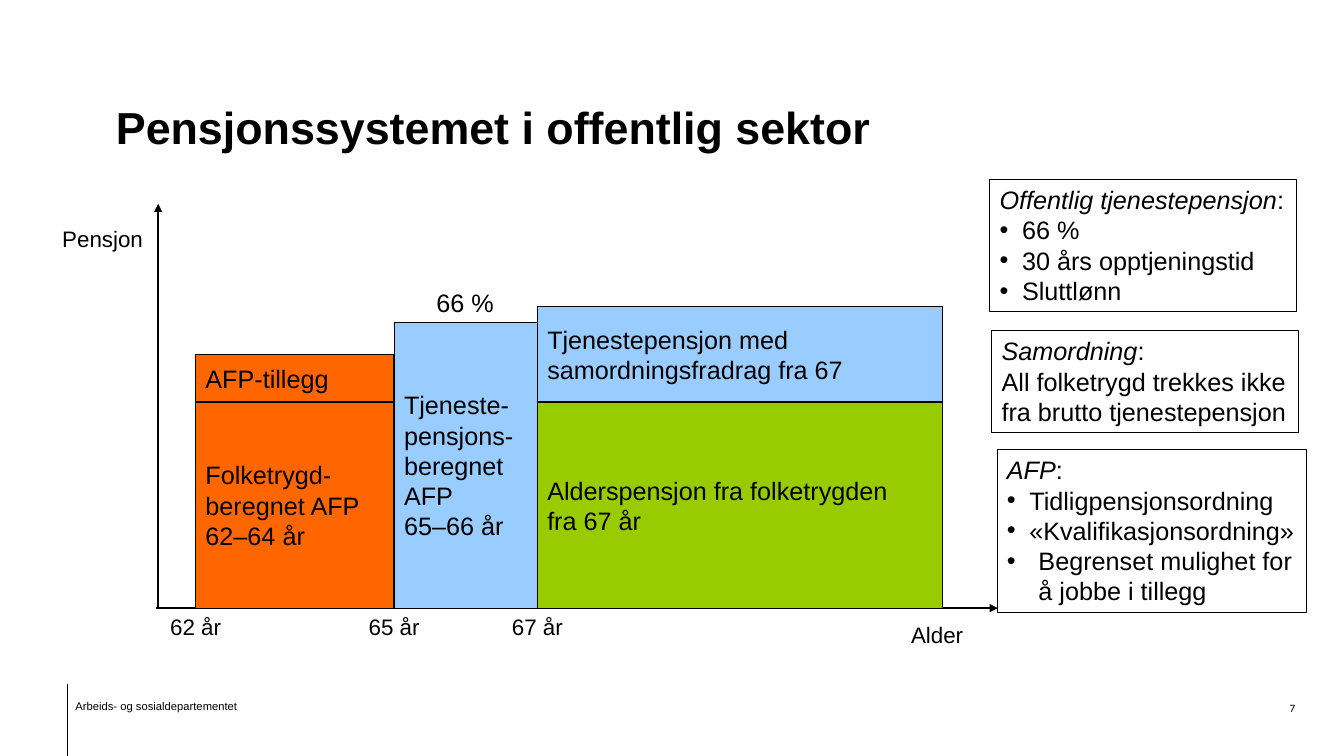
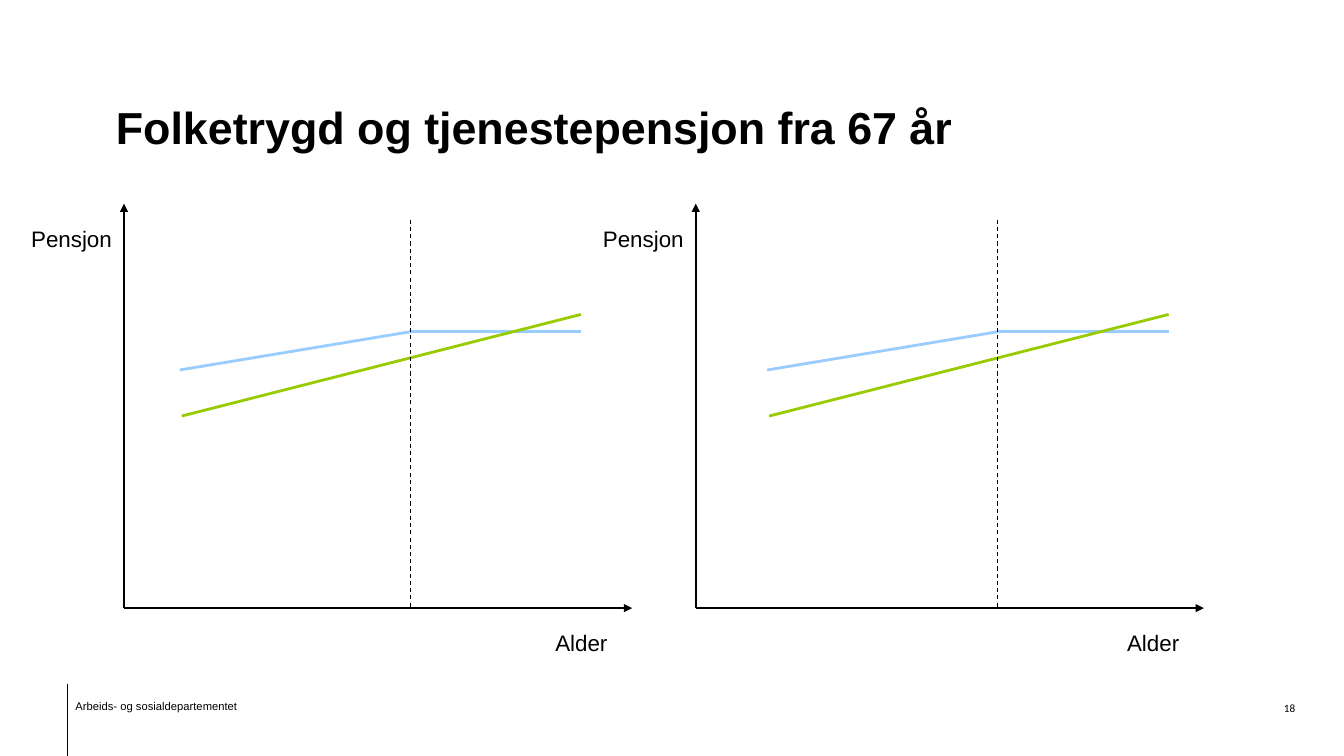
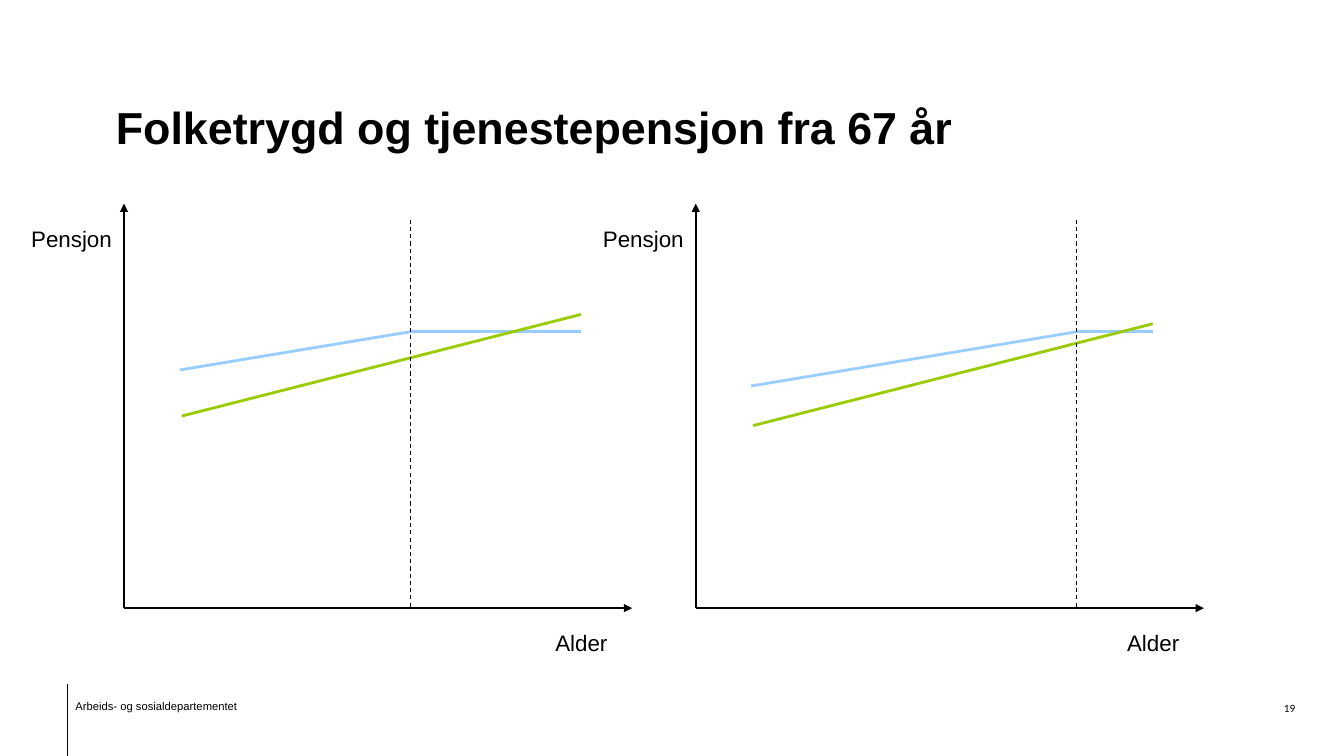
"""Build three slides on pensions in the public sector."""
from lxml import etree
from pptx import Presentation
from pptx.dml.color import RGBColor
from pptx.enum.dml import MSO_LINE
from pptx.enum.shapes import MSO_CONNECTOR, MSO_SHAPE
from pptx.enum.text import MSO_ANCHOR, MSO_AUTO_SIZE, PP_ALIGN
from pptx.oxml.ns import qn
from pptx.util import Pt

BLACK = RGBColor(0x00, 0x00, 0x00)
BLUE = RGBColor(0x99, 0xCC, 0xFF)
GREEN = RGBColor(0x99, 0xCC, 0x00)
ORANGE = RGBColor(0xFF, 0x66, 0x00)
LEFT, CENTER, RIGHT = PP_ALIGN.LEFT, PP_ALIGN.CENTER, PP_ALIGN.RIGHT
TOP, MIDDLE, BOTTOM = MSO_ANCHOR.TOP, MSO_ANCHOR.MIDDLE, MSO_ANCHOR.BOTTOM
FIT, FIXED = MSO_AUTO_SIZE.SHAPE_TO_FIT_TEXT, MSO_AUTO_SIZE.NONE
STRAIGHT, RECTANGLE, DASH = MSO_CONNECTOR.STRAIGHT, MSO_SHAPE.RECTANGLE, MSO_LINE.DASH
FONT, NUMBER_FONT = "Arial", "Calibri"

TITLE_ONLY = 5
TITLE_AREA = (75.6, 23, 790, 90)
DEPARTMENT = "Arbeids- og sosialdepartementet"
AXIS_TOP, AXIS_BASE = 145.5, 434.4

SECTOR_TITLE = "Pensjonssystemet i offentlig sektor"
AGE_62, AGE_65, AGE_67, AGE_END = 139.7, 281.5, 383.8, 673.2
BASIC_TOP = 287.2
TICKS = [("62 år", AGE_62), ("65 år", AGE_65), ("67 år", AGE_67)]
BLOCKS = [
    ("Alderspensjon fra folketrygden\vfra 67 år", GREEN, AGE_67, AGE_END, BASIC_TOP, AXIS_BASE),
    ("Tjeneste-\vpensjons-\vberegnet\vAFP\v65–66 år", BLUE, AGE_65, AGE_67, 230.2, AXIS_BASE),
    ("Tjenestepensjon med samordningsfradrag fra 67", BLUE, AGE_67, AGE_END, 219, BASIC_TOP),
    ("Folketrygd-\vberegnet AFP\v62–64 år", ORANGE, AGE_62, AGE_65, BASIC_TOP, AXIS_BASE),
    ("AFP-tillegg", ORANGE, AGE_62, AGE_65, 253, BASIC_TOP),
]
NOTES = [
    ("Offentlig tjenestepensjon", (707, 128.2, 219, 94.3),
     [("66 %", 16), ("30 års opptjeningstid", 16), ("Sluttlønn", 16)]),
    ("Samordning", (708.4, 236.2, 219.4, 72.7),
     [("All folketrygd trekkes ikke\vfra brutto tjenestepensjon", 0)]),
    ("AFP", (712.2, 321.2, 221, 116.4),
     [("Tidligpensjonsordning", 16), ("«Kvalifikasjonsordning»", 16),
      ("Begrenset mulighet for\vå jobbe i tillegg", 22.5)]),
]

COMPARISON_TITLE = "Folketrygd og tjenestepensjon fra 67 år"
LEVEL = 237
FIRST_PANEL = dict(origin=88.6, start=128.4, kink=293, end=415, blue=264.3, green=(297.2, 224.6))
LATER_PANEL = dict(origin=497, start=548, kink=712.6, end=834.8, blue=264.3, green=(297.2, 224.6))
LONGER_PANEL = dict(origin=497, start=536.6, kink=769, end=823.4, blue=275.7, green=(304, 231.3))
COMPARISONS = [(18, [FIRST_PANEL, LATER_PANEL]), (19, [FIRST_PANEL, LONGER_PANEL])]


def points(*values):
    return [Pt(value) for value in values]


def style(paragraph, size, name=FONT, align=LEFT, bold=False):
    paragraph.alignment = align
    for run in paragraph.runs:
        run.font.size = Pt(size)
        run.font.name = name
        run.font.bold = bold
        run.font.color.rgb = BLACK


def add_line(slide, x1, y1, x2, y2, color=BLACK, width=0.75, dash=None, arrow=False):
    line = slide.shapes.add_connector(STRAIGHT, *points(x1, y1, x2, y2))
    line.line.color.rgb = color
    line.line.width = Pt(width)
    if dash:
        line.line.dash_style = dash
    if arrow:
        etree.SubElement(line.line._get_or_add_ln(), qn("a:tailEnd"), type="triangle")
    etree.SubElement(line._element.spPr, qn("a:effectLst"))


def add_label(slide, text, left, top, width, height, size=16, name=FONT, align=LEFT):
    label = slide.shapes.add_textbox(*points(left, top, width, height))
    frame = label.text_frame
    frame.word_wrap = False
    frame.auto_size = FIT
    frame.text = text
    style(frame.paragraphs[0], size, name, align)
    return label


def add_box(slide, left, top, width, height, color=None, anchor=TOP):
    box = slide.shapes.add_shape(RECTANGLE, *points(left, top, width, height))
    box.shadow.inherit = False
    if color is None:
        box.fill.background()
    else:
        box.fill.solid()
        box.fill.fore_color.rgb = color
    box.line.color.rgb = BLACK
    box.line.width = Pt(0.75)
    box.text_frame.vertical_anchor = anchor
    return box


def add_bullet(paragraph, indent):
    properties = paragraph._p.get_or_add_pPr()
    properties.set("marL", str(Pt(indent)))
    properties.set("indent", str(-Pt(indent)))
    etree.SubElement(properties, qn("a:buFont"), typeface=FONT)
    etree.SubElement(properties, qn("a:buChar"), char="•")


def add_note(slide, heading, area, lines):
    frame = add_box(slide, *area).text_frame
    frame.word_wrap = False
    frame.auto_size = FIT
    first = frame.paragraphs[0]
    for text, italic in ((heading, True), (":", False)):
        run = first.add_run()
        run.text = text
        run.font.italic = italic
    for text, indent in lines:
        paragraph = frame.add_paragraph()
        paragraph.text = text
        if indent:
            add_bullet(paragraph, indent)
    for paragraph in frame.paragraphs:
        style(paragraph, 18)


def add_slide(presentation, title_text, number):
    slide = presentation.slides.add_slide(presentation.slide_layouts[TITLE_ONLY])
    title = slide.shapes.title
    title.left, title.top, title.width, title.height = points(*TITLE_AREA)
    frame = title.text_frame
    frame.text = title_text
    frame.vertical_anchor = BOTTOM
    frame.auto_size = FIXED
    style(frame.paragraphs[0], 32, bold=True)
    add_label(slide, DEPARTMENT, 46.8, 496, 204, 17).text_frame.word_wrap = True
    style(slide.shapes[-1].text_frame.paragraphs[0], 8)
    add_line(slide, 48.4, 488.4, 48.4, 540)
    number_frame = add_label(slide, str(number), 885.6, 497.5, 39.6, 17, 8, NUMBER_FONT, RIGHT).text_frame
    number_frame.word_wrap = True
    number_frame.margin_right = 0
    return slide


def add_axes(slide, origin, start, end, pensjon_left, alder_left, alder_top):
    add_line(slide, origin, AXIS_BASE, origin, AXIS_TOP, width=1.5, arrow=True)
    add_line(slide, start, AXIS_BASE, end, AXIS_BASE, width=1.5, arrow=True)
    add_label(slide, "Pensjon", pensjon_left, 157, 72, 26.6)
    add_label(slide, "Alder", alder_left, alder_top, 51.8, 26.6)


def add_sector_slide(presentation):
    slide = add_slide(presentation, SECTOR_TITLE, 7)
    add_axes(slide, 113, 111.6, 712.8, 37.4, 643.7, 440)
    for text, color, left, right, top, bottom in BLOCKS:
        frame = add_box(slide, left, top, right - left, bottom - top, color, MIDDLE).text_frame
        frame.word_wrap = True
        frame.paragraphs[0].text = text
        style(frame.paragraphs[0], 18)
    for text, center in TICKS:
        add_label(slide, text, center - 25.5, AXIS_BASE, 51, 26.6, align=CENTER)
    add_label(slide, "66 %", 304.6, 201.6, 55.4, 29, 18)
    for heading, area, lines in NOTES:
        add_note(slide, heading, area, lines)


def add_panel(slide, origin, start, kink, end, blue, green):
    add_axes(slide, origin, origin, origin + 363, origin - 73.4, origin + 301, 445.7)
    add_line(slide, start, blue, kink, LEVEL, BLUE, 2)
    add_line(slide, kink, LEVEL, end, LEVEL, BLUE, 2)
    add_line(slide, start + 1.4, green[0], end, green[1], GREEN, 2)
    add_line(slide, kink, 157, kink, AXIS_BASE, dash=DASH)


def main():
    presentation = Presentation()
    presentation.slide_width, presentation.slide_height = points(960, 540)
    add_sector_slide(presentation)
    for number, panels in COMPARISONS:
        slide = add_slide(presentation, COMPARISON_TITLE, number)
        for panel in panels:
            add_panel(slide, **panel)
    presentation.save("out.pptx")


if __name__ == "__main__":
    main()
